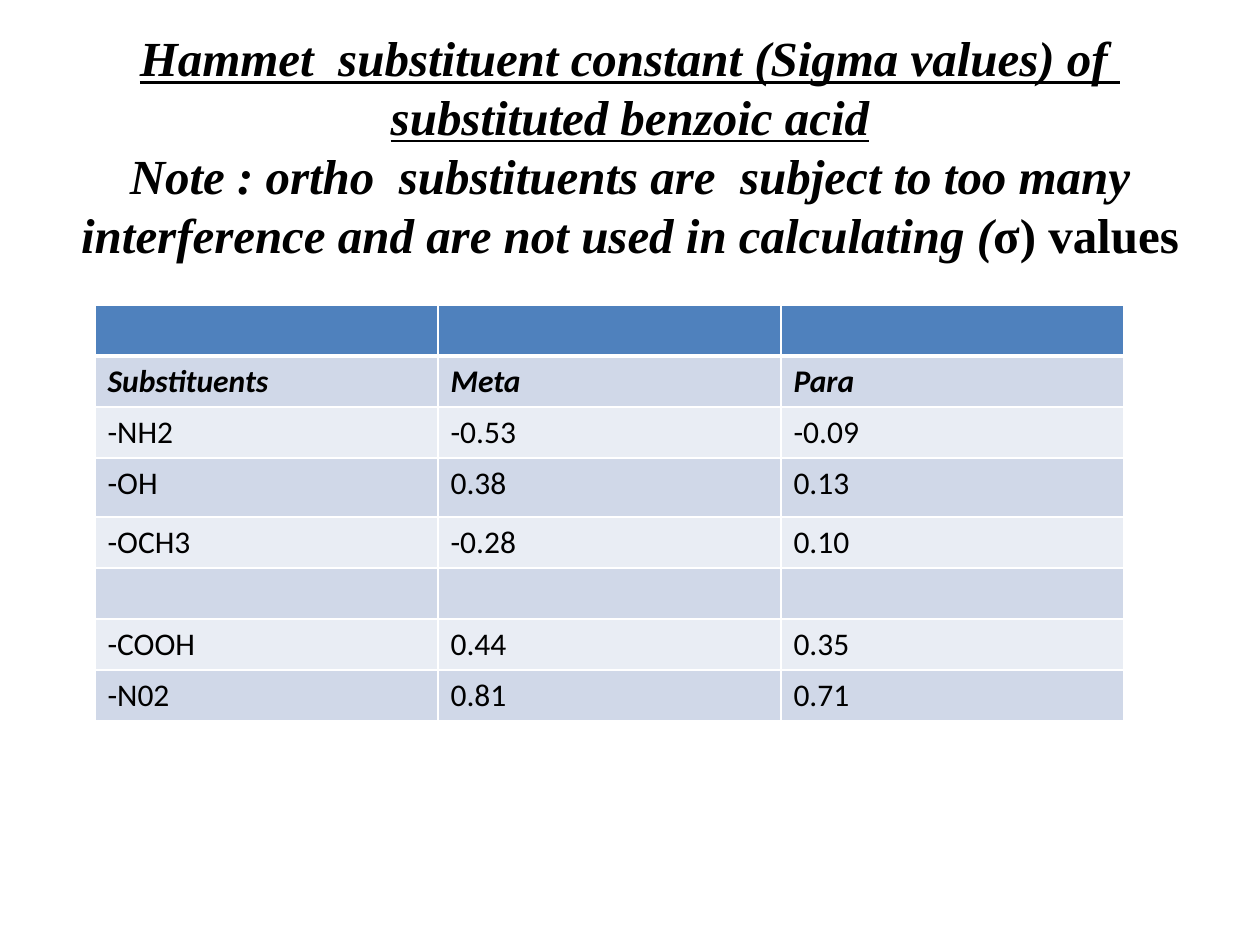
from lxml.etree import SubElement
from pptx import Presentation
from pptx.dml.color import RGBColor
from pptx.enum.text import MSO_ANCHOR, PP_ALIGN
from pptx.oxml.ns import qn
from pptx.util import Pt

PX = 914400 // 126
BLACK, WHITE, HEADER = "000000", "FFFFFF", "4F81BD"
BANDS = ["E9EDF4", "D0D8E8"]


def color(value):
    return RGBColor.from_string(value)


def style(font, formats):
    font.color.rgb = color(BLACK)
    for name, value in formats.items():
        setattr(font, name, value)


presentation = Presentation()
presentation.slide_width = 1260 * PX
presentation.slide_height = 945 * PX
slide = presentation.slides.add_slide(presentation.slide_layouts[6])

title = slide.shapes.add_textbox(63 * PX, 3 * PX, 1134 * PX, 344 * PX)
frame = title.text_frame
frame.word_wrap = True
frame.vertical_anchor = MSO_ANCHOR.MIDDLE
frame.margin_bottom = 65 * PX
paragraph = frame.paragraphs[0]
paragraph.alignment = PP_ALIGN.CENTER
title_format = {"name": "Times New Roman", "size": Pt(28), "bold": True}
title_runs = [
    ("Hammet  substituent constant (Sigma values) of  substituted benzoic acid",
     {"italic": True, "underline": True}),
    ("Note : ortho  substituents are  subject to too many interference "
     "and are not used in calculating (", {"italic": True}),
    ("σ) values", {}),
]
for index, (text, extra) in enumerate(title_runs):
    if index == 1:
        paragraph.add_line_break()
    run = paragraph.add_run()
    run.text = text
    style(run.font, title_format | extra)

rows = [
    ("", "", ""),
    ("Substituents", "Meta", "Para"),
    ("-NH2", "-0.53", "-0.09"),
    ("-OH", "0.38", "0.13"),
    ("-OCH3", "-0.28", "0.10"),
    ("", "", ""),
    ("-COOH", "0.44", "0.35"),
    ("-N02", "0.81", "0.71"),
]
table = slide.shapes.add_table(
    len(rows), 3, 95 * PX, 305 * PX, 1029 * PX, 416 * PX).table
for column in table.columns:
    column.width = 343 * PX
for row_index, values in enumerate(rows):
    table.rows[row_index].height = (59 if row_index == 3 else 51) * PX
    for column_index, value in enumerate(values):
        cell = table.cell(row_index, column_index)
        properties = cell._tc.get_or_add_tcPr()
        for side in ("lnL", "lnR", "lnT", "lnB"):
            thick = (row_index, side) in [(0, "lnB"), (1, "lnT")]
            border = SubElement(properties, qn(f"a:{side}"),
                                w=str(Pt(3 if thick else 1)))
            fill = SubElement(border, qn("a:solidFill"))
            SubElement(fill, qn("a:srgbClr"), val=WHITE)
        cell.fill.solid()
        cell.fill.fore_color.rgb = color(
            BANDS[row_index % 2] if row_index else HEADER)
        if value:
            run = cell.text_frame.paragraphs[0].add_run()
            run.text = value
            heading = row_index == 1
            style(run.font, {"name": "Calibri", "size": Pt(18),
                             "bold": heading, "italic": heading})

presentation.save("out.pptx")
